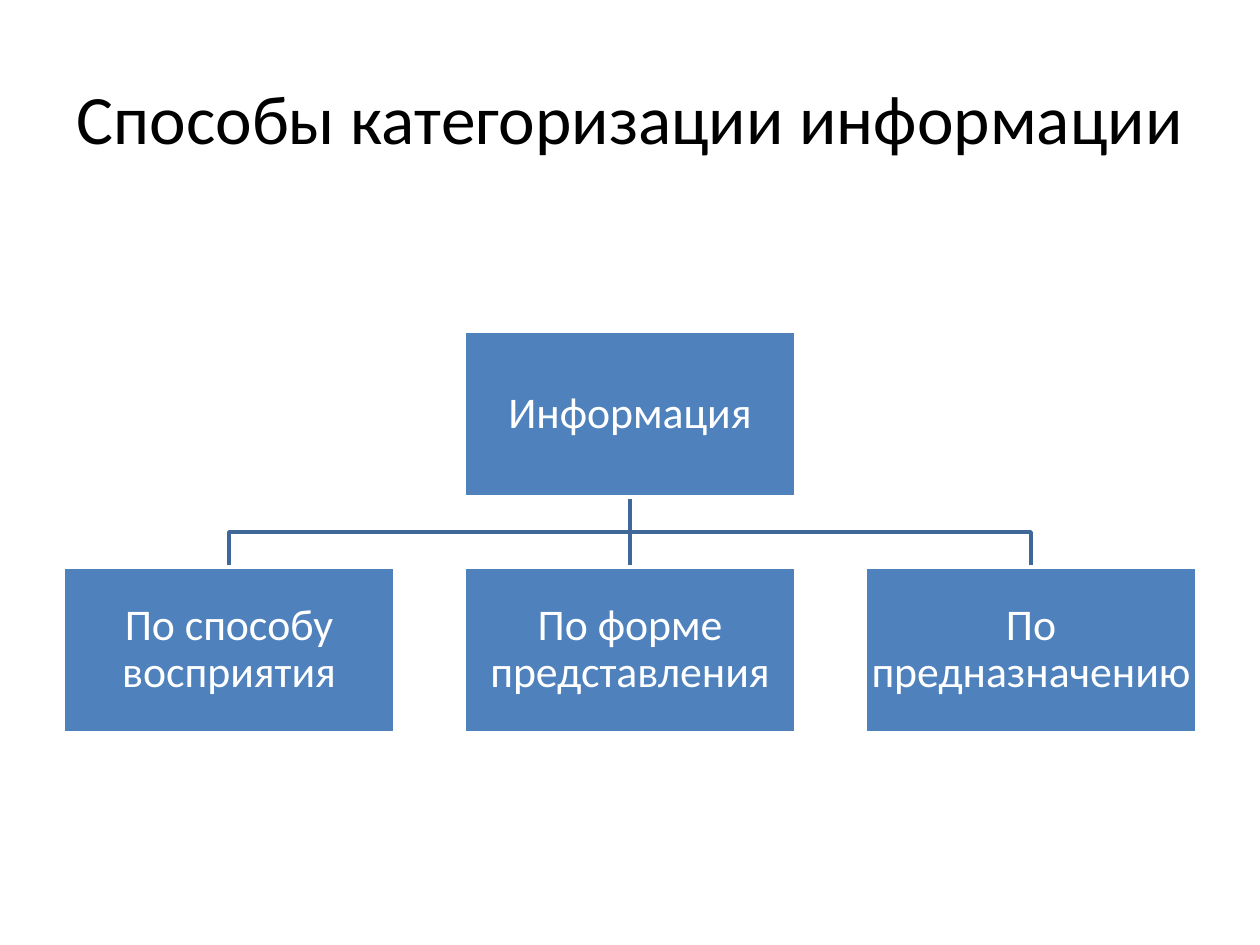
from pptx import Presentation, util as u
from pptx.dml.color import RGBColor
from pptx.enum import shapes, text
from pptx.oxml.ns import qn
from lxml import etree

PX = 914400 // 126


def rgb(code):
    return RGBColor.from_string(code)


def write(shape, words, size, color, inset):
    frame = shape.text_frame
    frame.word_wrap = True
    frame.vertical_anchor = text.MSO_ANCHOR.MIDDLE
    frame.margin_left = frame.margin_right = inset * PX
    frame.margin_top = frame.margin_bottom = inset * PX
    frame.text = words
    para = frame.paragraphs[0]
    para.alignment = text.PP_ALIGN.CENTER
    font = para.runs[0].font
    font.name = "Calibri"
    font.size = u.Pt(size)
    font.color.rgb = rgb(color)
    return para


deck = Presentation()
deck.slide_width, deck.slide_height = u.Inches(10), u.Inches(7.5)
slide = deck.slides.add_slide(deck.slide_layouts[6])
items = slide.shapes

# Title
title = items.add_textbox(63 * PX, 38 * PX, 1134 * PX, 157 * PX)
write(title, "Способы категоризации информации", 39.6, "000000", 6)

# Tree layout: a root box centred over three child boxes
wide, high = 332, 166
mid, step = 630, 401
top, low = 331, 567
base = top + high
bend = (base + low) // 2

# Branches to the outer children
links = []
for end in (mid + step, mid - step):
    path = items.build_freeform(mid, base, scale=PX)
    path.add_line_segments([(mid, bend), (end, bend), (end, low)], close=False)
    branch = path.convert_to_shape()
    branch.fill.background()
    branch.shadow.inherit = False
    links.append(branch)

# Straight stem to the middle child
stem = items.add_connector(shapes.MSO_CONNECTOR.STRAIGHT,
                           mid * PX, base * PX, mid * PX, low * PX)
etree.SubElement(stem._element.spPr, qn("a:effectLst"))
links.append(stem)

for link in links:
    link.line.color.rgb = rgb("3F6797")
    link.line.width = u.Pt(2)

# Boxes
boxes = [
    ("Информация", mid, top),
    ("По способу восприятия", mid - step, low),
    ("По форме представления", mid, low),
    ("По предназначению", mid + step, low),
]
for words, x, y in boxes:
    box = items.add_shape(shapes.MSO_SHAPE.RECTANGLE, (x - wide // 2) * PX,
                          y * PX, wide * PX, high * PX)
    box.shadow.inherit = False
    box.fill.solid()
    box.fill.fore_color.rgb = rgb("4F81BD")
    box.line.color.rgb = rgb("FFFFFF")
    box.line.width = u.Pt(2)
    para = write(box, words, 25, "FFFFFF", 2)
    para.line_spacing = 0.9

deck.save("out.pptx")
